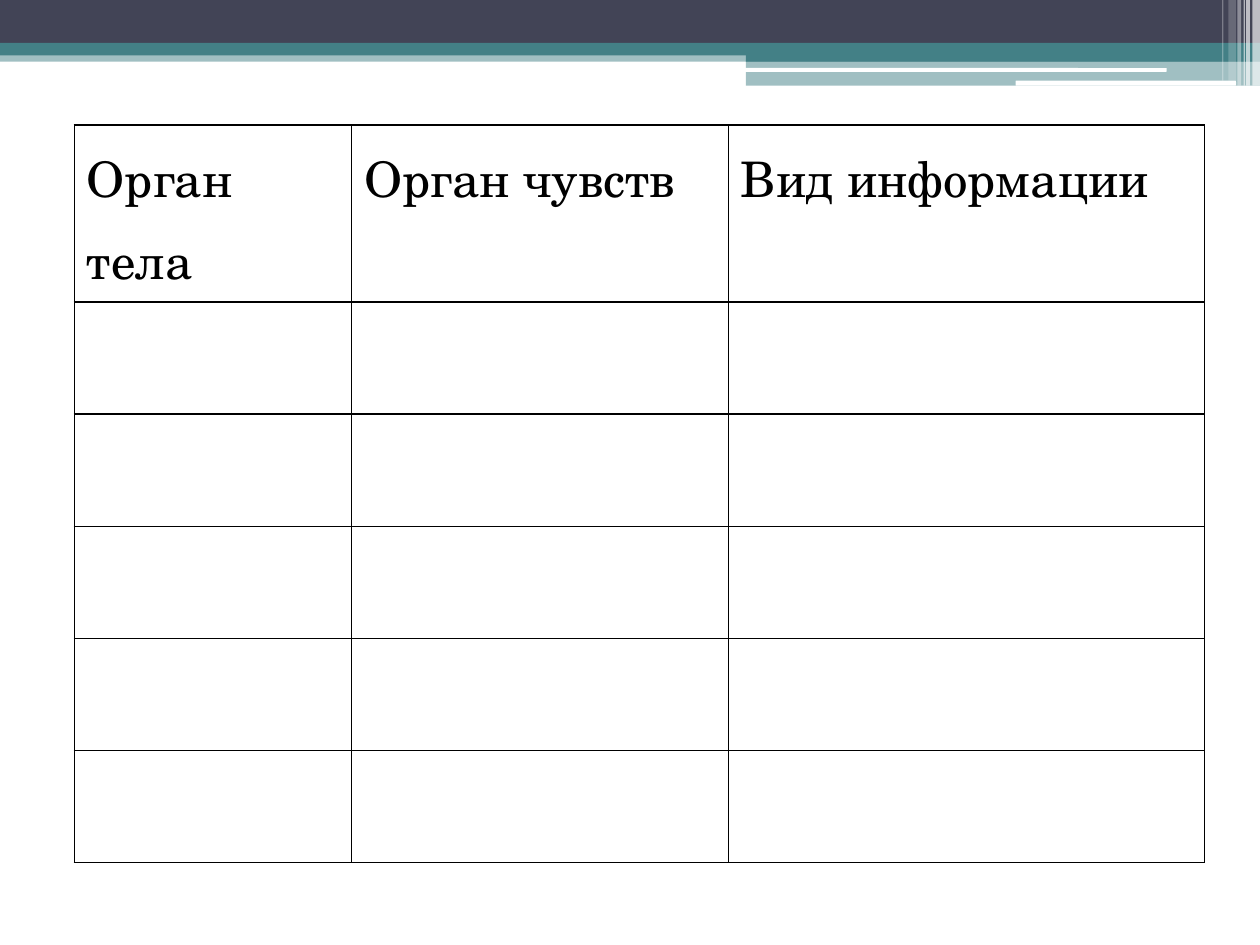
"""Build a slide with a blank table of body organs, senses and information types."""
from dataclasses import dataclass

from lxml import etree
from pptx import Presentation
from pptx.dml.color import RGBColor
from pptx.enum.shapes import MSO_SHAPE
from pptx.oxml.ns import qn
from pptx.util import Inches, Pt

RECT = MSO_SHAPE.RECTANGLE
ROUNDED = MSO_SHAPE.ROUNDED_RECTANGLE
SLATE = RGBColor(0x42, 0x44, 0x56)
TEAL = RGBColor(0x43, 0x80, 0x86)
WHITE = RGBColor(0xFF, 0xFF, 0xFF)
BLACK = RGBColor(0, 0, 0)

SLIDE_WIDTH, SLIDE_HEIGHT = Inches(10), Inches(7.5)
GRID_COLUMNS, GRID_ROWS = 1000, 750
COLUMN, ROW = SLIDE_WIDTH // GRID_COLUMNS, SLIDE_HEIGHT // GRID_ROWS

HEADINGS = ("Орган тела", "Орган чувств", "Вид информации")
TABLE_LEFT, TABLE_TOP = 59, 99
COLUMN_WIDTHS = (220, 299, 378)
ROW_HEIGHTS = (131,) + (89,) * 5
FONT_NAME = "TeX Gyre Schola"


@dataclass(frozen=True)
class Band:
    """A decorative bar, measured in grid columns and rows."""

    left: int
    top: int
    width: int
    height: int
    color: RGBColor
    opacity: int = 100
    outline: int = RECT


@dataclass(frozen=True)
class Stripe:
    """A translucent vertical stripe hanging from the top edge."""

    left: int
    width: int
    height: int
    opacity: int


BANDS = (
    Band(0, 40, GRID_COLUMNS, 9, TEAL, 50),
    Band(0, 0, GRID_COLUMNS, 34, SLATE),
    Band(0, 34, GRID_COLUMNS, 10, TEAL),
    Band(592, 39, 408, 10, TEAL),
    Band(592, 48, 408, 20, TEAL, 50),
    Band(591, 54, 335, 3, WHITE, outline=ROUNDED),
    Band(806, 64, 175, 4, WHITE, outline=ROUNDED),
)
STRIPES = (
    Stripe(994, 6, 68, 65),
    Stripe(989, 3, 68, 65),
    Stripe(987, 1, 68, 60),
    Stripe(982, 3, 68, 40),
    Stripe(975, 6, 64, 20),
    Stripe(970, 1, 64, 30),
)


def draw_band(slide, band: Band) -> None:
    """Draw one bar without outline or shadow."""
    bar = slide.shapes.add_shape(
        band.outline, band.left * COLUMN, band.top * ROW, band.width * COLUMN, band.height * ROW
    )
    bar.shadow.inherit = False
    bar.line.fill.background()
    bar.fill.solid()
    bar.fill.fore_color.rgb = band.color
    if band.opacity < 100:
        color = bar.fill._xPr.find(qn("a:solidFill"))[0]
        etree.SubElement(color, qn("a:alpha"), val=str(band.opacity * 1000))


def set_borders(cell) -> None:
    """Give a cell a thin black line on every side."""
    properties = cell._tc.get_or_add_tcPr()
    for position, side in enumerate(("a:lnL", "a:lnR", "a:lnT", "a:lnB")):
        line = etree.Element(qn(side), w=str(Pt(1)))
        fill = etree.SubElement(line, qn("a:solidFill"))
        etree.SubElement(fill, qn("a:srgbClr"), val=str(BLACK))
        properties.insert(position, line)


def draw_table(slide) -> None:
    """Draw the table with its headings and empty rows."""
    table = slide.shapes.add_table(
        len(ROW_HEIGHTS), len(COLUMN_WIDTHS), TABLE_LEFT * COLUMN, TABLE_TOP * ROW,
        sum(COLUMN_WIDTHS) * COLUMN, sum(ROW_HEIGHTS) * ROW,
    ).table
    for column, width in zip(table.columns, COLUMN_WIDTHS):
        column.width = width * COLUMN
    for row, height in zip(table.rows, ROW_HEIGHTS):
        row.height = height * ROW
    for cell in table.iter_cells():
        cell.fill.background()
        set_borders(cell)
    for cell, heading in zip(table.rows[0].cells, HEADINGS):
        cell.text = heading
        paragraph = cell.text_frame.paragraphs[0]
        paragraph.line_spacing = 1.15
        paragraph.font.name = FONT_NAME
        paragraph.font.size = Pt(28)
        paragraph.font.bold = False
        paragraph.font.color.rgb = BLACK


def main() -> None:
    """Assemble and save the slide."""
    presentation = Presentation()
    presentation.slide_width, presentation.slide_height = SLIDE_WIDTH, SLIDE_HEIGHT
    slide = presentation.slides.add_slide(presentation.slide_layouts.get_by_name("Blank"))
    for band in BANDS:
        draw_band(slide, band)
    for stripe in STRIPES:
        draw_band(slide, Band(stripe.left, 0, stripe.width, stripe.height, WHITE, stripe.opacity))
    draw_table(slide)
    presentation.save("out.pptx")


if __name__ == "__main__":
    main()
